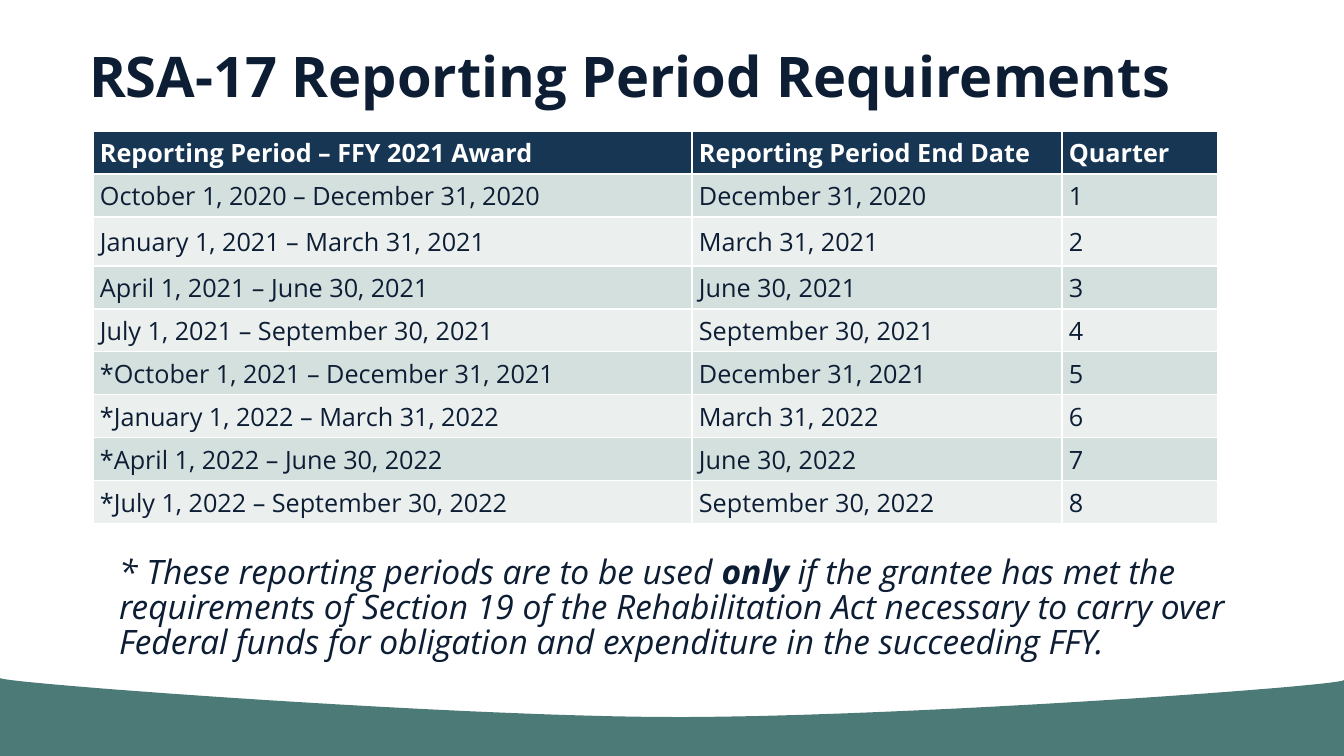
from lxml import etree
from pptx import Presentation
from pptx.dml.color import RGBColor
from pptx.enum.shapes import MSO_SHAPE
from pptx.enum.text import MSO_ANCHOR, MSO_AUTO_SIZE, PP_ALIGN
from pptx.oxml.ns import qn
from pptx.util import Pt

RECTANGLE = MSO_SHAPE.RECTANGLE
BOTTOM, MIDDLE, TOP = MSO_ANCHOR.BOTTOM, MSO_ANCHOR.MIDDLE, MSO_ANCHOR.TOP
NO_AUTOFIT = MSO_AUTO_SIZE.NONE
LEFT = PP_ALIGN.LEFT

TITLE = "RSA-17 Reporting Period Requirements"
HEADER = ("Reporting Period – FFY 2021 Award", "Reporting Period End Date", "Quarter")
PERIODS = [
    ("October 1, 2020", "December 31, 2020"),
    ("January 1, 2021", "March 31, 2021"),
    ("April 1, 2021", "June 30, 2021"),
    ("July 1, 2021", "September 30, 2021"),
    ("*October 1, 2021", "December 31, 2021"),
    ("*January 1, 2022", "March 31, 2022"),
    ("*April 1, 2022", "June 30, 2022"),
    ("*July 1, 2022", "September 30, 2022"),
]
FOOTNOTE = [
    ("* These reporting periods are to be used ", False),
    ("only", True),
    (" if the grantee has met the requirements of Section 19 of the Rehabilitation Act "
     "necessary to carry over Federal funds for obligation and expenditure in the "
     "succeeding FFY.", False),
]

FONT = "Open Sans"
INK, WHITE, NAVY, TEAL = "0D1D34", "FFFFFF", "173654", "4C7A76"
BANDS = ("D4E0DE", "EBF0EF")

SLIDE_W, SLIDE_H = 1344, 756
TITLE_BOX = (79, 22, 1185, 92)
FOOTNOTE_BOX = (109, 552, 1185, 136)
TABLE_LEFT, TABLE_TOP = 93, 131
COLUMN_WIDTHS = (599, 370, 156)
ROW_HEIGHTS = [43, 43, 49] + [43] * 6
CELL_INSET = 7
BASE_TOP = 746
WAVE_BOTTOM = 749
# Cubic Bezier segments of the wave's upper edge, left to right
WAVE_EDGE = [
    ((0, 678), (0, 683), (444, 716), (667, 717)),
    ((667, 717), (892, 718), (1344, 686), (1344, 680)),
]
WAVE_STEPS = 40


def px(length):
    return round(length * 12192000 / SLIDE_W)


def box(lengths):
    return [px(length) for length in lengths]


def color(hex_value):
    return RGBColor.from_string(hex_value)


def style(font, size, hex_value, bold=None, italic=None):
    font.name, font.size, font.bold, font.italic = FONT, Pt(size), bold, italic
    font.color.rgb = color(hex_value)


def paint(shape, hex_value):
    shape.shadow.inherit = False
    shape.fill.solid()
    shape.fill.fore_color.rgb = color(hex_value)
    shape.line.fill.background()


def bezier(points, t):
    weights = ((1 - t) ** 3, 3 * t * (1 - t) ** 2, 3 * t * t * (1 - t), t ** 3)
    return tuple(px(sum(w * p[axis] for w, p in zip(weights, points))) for axis in (0, 1))


def add_wave(slide):
    base = slide.shapes.add_shape(
        RECTANGLE, *box((0, BASE_TOP, SLIDE_W, SLIDE_H - BASE_TOP)))
    paint(base, TEAL)
    edge = [bezier(segment, step / WAVE_STEPS)
            for segment in WAVE_EDGE for step in range(WAVE_STEPS + 1)]
    corners = [(px(SLIDE_W), px(WAVE_BOTTOM)), (0, px(WAVE_BOTTOM))]
    outline = slide.shapes.build_freeform(*edge[0])
    outline.add_line_segments(edge[1:] + corners)
    paint(outline.convert_to_shape(), TEAL)


def place(placeholder, lengths, anchor):
    """Move a placeholder and return its first paragraph."""
    placeholder.left, placeholder.top, placeholder.width, placeholder.height = box(lengths)
    frame = placeholder.text_frame
    frame.word_wrap = True
    frame.auto_size = NO_AUTOFIT
    frame.vertical_anchor = anchor
    paragraph = frame.paragraphs[0]
    paragraph.alignment = LEFT
    paragraph.space_before = Pt(0)
    return paragraph


def add_title(slide):
    paragraph = place(slide.shapes.title, TITLE_BOX, BOTTOM)
    paragraph.text = TITLE
    paragraph.line_spacing = 1.02
    style(paragraph.font, 40, INK, bold=True)


def add_footnote(slide):
    paragraph = place(slide.placeholders[1], FOOTNOTE_BOX, TOP)
    paragraph.line_spacing = 0.86
    properties = paragraph._p.get_or_add_pPr()
    properties.set("marL", "0")
    properties.set("indent", "0")
    etree.SubElement(properties, qn("a:buNone"))
    style(paragraph.font, 24, INK, italic=True)
    for words, bold in FOOTNOTE:
        run = paragraph.add_run()
        run.text = words
        run.font.bold = bold


def add_periods_table(slide):
    rows = [HEADER] + [(f"{start} – {end}", end, str(quarter))
                       for quarter, (start, end) in enumerate(PERIODS, 1)]
    table = slide.shapes.add_table(
        len(rows), len(HEADER),
        *box((TABLE_LEFT, TABLE_TOP, sum(COLUMN_WIDTHS), sum(ROW_HEIGHTS)))).table
    for column, width in zip(table.columns, COLUMN_WIDTHS):
        column.width = px(width)
    for r, (row, height) in enumerate(zip(rows, ROW_HEIGHTS)):
        table.rows[r].height = px(height)
        is_header = r == 0
        for c, words in enumerate(row):
            cell = table.cell(r, c)
            cell.fill.solid()
            cell.fill.fore_color.rgb = color(NAVY if is_header else BANDS[(r - 1) % 2])
            cell.vertical_anchor = MIDDLE
            cell.margin_left = cell.margin_right = px(CELL_INSET)
            cell.margin_top = cell.margin_bottom = 0
            cell.text = words
            style(cell.text_frame.paragraphs[0].font, 18,
                  WHITE if is_header else INK, bold=is_header)


def main():
    deck = Presentation()
    deck.slide_width, deck.slide_height = px(SLIDE_W), px(SLIDE_H)
    slide = deck.slides.add_slide(deck.slide_layouts[1])
    add_wave(slide)
    add_title(slide)
    add_footnote(slide)
    add_periods_table(slide)
    deck.save("out.pptx")


if __name__ == "__main__":
    main()
